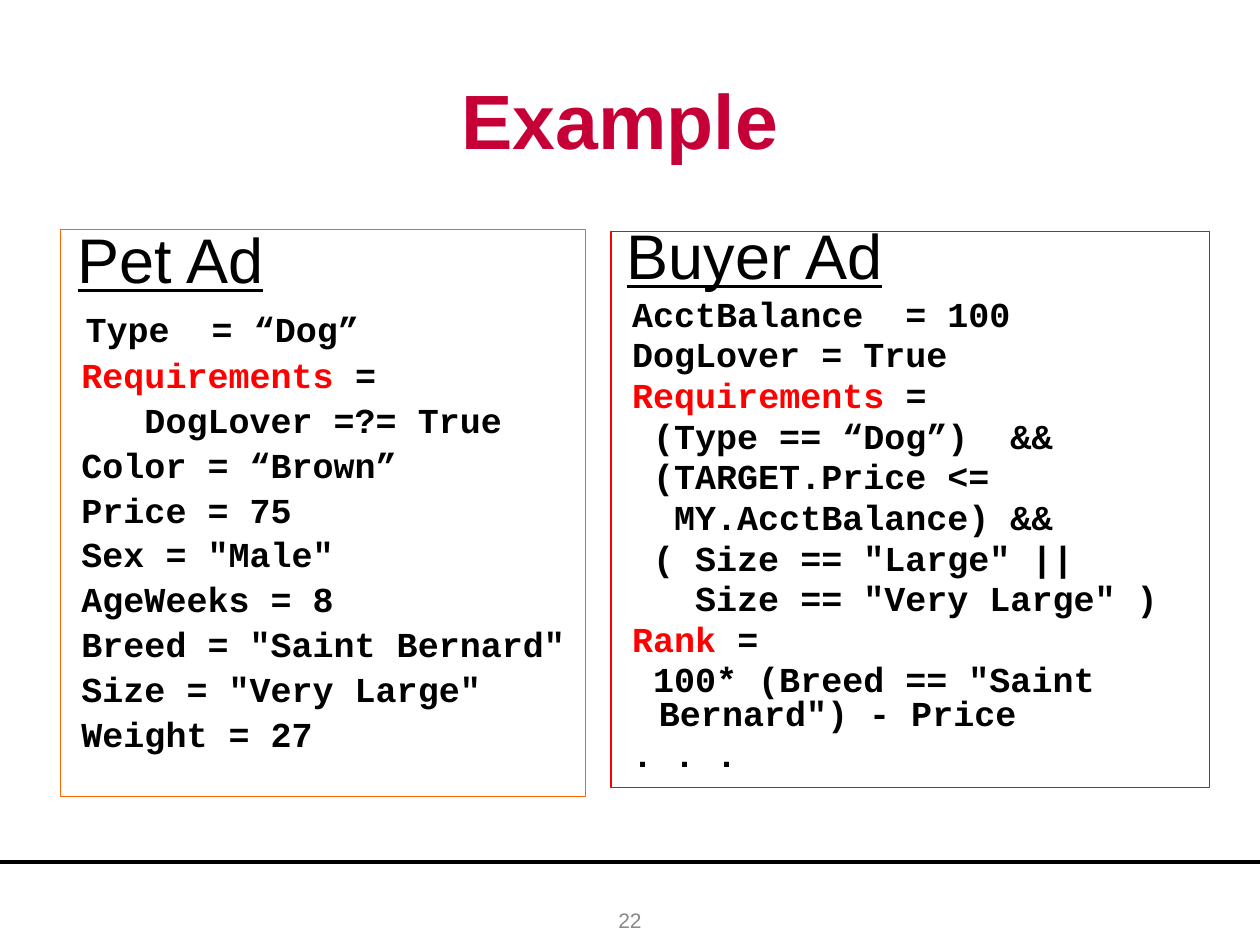
"""Build the example slide comparing a pet ad with a buyer ad."""
import pptx
import pptx.dml.color
import pptx.enum.shapes
import pptx.enum.text
import pptx.util
from lxml import etree

COLORS = {"text": "000000", "title": "C60036", "keyword": "FF0000",
          "pet": "FF6600", "buyer": "FF0000", "number": "898989"}
KEYWORDS = ("Requirements", "Rank")
PET_LINES = [
    "Type  = “Dog”", " Requirements =", "    DogLover =?= True",
    " Color = “Brown”", " Price = 75", ' Sex = "Male"', " AgeWeeks = 8",
    ' Breed = "Saint Bernard"', ' Size = "Very Large"', " Weight = 27",
]
BUYER_LINES = [
    "AcctBalance  = 100", " DogLover = True", " Requirements =",
    "  (Type == “Dog”)  &&", "  (TARGET.Price <=", "   MY.AcctBalance) &&",
    '  ( Size == "Large" ||', '    Size == "Very Large" )', " Rank =",
    '  100* (Breed == "Saint Bernard") - Price', " . . .",
]


class AdSlide:
    columns, rows = 100, 75
    heading = {"name": "Arial", "size": pptx.util.Pt(36)}
    code = {"name": "Courier New", "size": pptx.util.Pt(20), "bold": True}

    def __init__(self, presentation):
        self.width, self.height = presentation.slide_width, presentation.slide_height
        self.slide = presentation.slides.add_slide(presentation.slide_layouts[6])

    def place(self, column, row):
        return (round(column * self.width / self.columns),
                round(row * self.height / self.rows))

    def color(self, name):
        return pptx.dml.color.RGBColor.from_string(COLORS[name])

    def set_frame(self, shape, anchor):
        frame = shape.text_frame
        values = {"word_wrap": True, "vertical_anchor": anchor, "margin_left": 0,
                  "margin_right": 0, "margin_top": 0, "margin_bottom": 0}
        for name, value in values.items():
            setattr(frame, name, value)
        return frame

    def add_run(self, paragraph, text, color, style):
        run = paragraph.add_run()
        run.text = text
        for name, value in style.items():
            setattr(run.font, name, value)
        run.font.color.rgb = self.color(color)

    def add_label(self, text, left, top, width, height, color, style):
        shape = self.slide.shapes.add_textbox(*self.place(left, top),
                                              *self.place(width, height))
        frame = self.set_frame(shape, pptx.enum.text.MSO_ANCHOR.MIDDLE)
        paragraph = frame.paragraphs[0]
        paragraph.alignment = pptx.enum.text.PP_ALIGN.CENTER
        self.add_run(paragraph, text, color, {"name": "Arial", **style})

    def add_rule(self, row):
        line = self.slide.shapes.add_connector(
            pptx.enum.shapes.MSO_CONNECTOR.STRAIGHT,
            *self.place(0, row), *self.place(self.columns, row))
        line.line.color.rgb = self.color("text")
        line.line.width = pptx.util.Pt(2.25)
        etree.SubElement(line._element.spPr, pptx.oxml.ns.qn("a:effectLst"))

    def add_paragraph(self, paragraph, spacing, before):
        values = {"alignment": pptx.enum.text.PP_ALIGN.LEFT,
                  "line_spacing": spacing, "space_before": pptx.util.Pt(before)}
        for name, value in values.items():
            setattr(paragraph, name, value)
        indent = pptx.util.Inches(0.38)
        properties = paragraph._p.get_or_add_pPr()
        properties.set("marL", str(indent))
        properties.set("indent", str(-indent))
        return paragraph

    def add_code(self, paragraph, text):
        keyword = next((word for word in KEYWORDS if word in text), None)
        if keyword is None:
            self.add_run(paragraph, text, "text", self.code)
            return
        for part in text.partition(keyword):
            color = "keyword" if part == keyword else "text"
            self.add_run(paragraph, part, color, self.code)

    def add_ad(self, title, lines, left, top, width, height, color, spacing, leads):
        shape = self.slide.shapes.add_shape(
            pptx.enum.shapes.MSO_SHAPE.RECTANGLE,
            *self.place(left, top), *self.place(width, height))
        shape.shadow.inherit = False
        shape.fill.background()
        shape.line.color.rgb = self.color(color)
        shape.line.width = pptx.util.Pt(0.75)
        frame = self.set_frame(shape, pptx.enum.text.MSO_ANCHOR.TOP)
        heading_lead, code_lead = (pptx.util.Pt(size) for size in leads)
        paragraph = self.add_paragraph(frame.paragraphs[0], spacing, 0)
        self.add_run(paragraph, " ", "text", {**self.heading, "size": heading_lead})
        self.add_run(paragraph, title, "text", {**self.heading, "underline": True})
        for index, text in enumerate(lines):
            before = 4 if index else 5
            paragraph = self.add_paragraph(frame.add_paragraph(), spacing, before)
            if index == 0:
                self.add_run(paragraph, " ", "text", {**self.code, "size": code_lead})
            self.add_code(paragraph, text)


def main():
    presentation = pptx.Presentation()
    presentation.slide_width = pptx.util.Inches(10)
    presentation.slide_height = pptx.util.Inches(7.5)
    slide = AdSlide(presentation)
    slide.add_rule(68.4)
    slide.add_label("22", 38.35, 71, 23.3, 4, "number", {"size": pptx.util.Pt(12)})
    slide.add_label("Example", 6.7, 4.4, 85, 10, "title",
                    {"size": pptx.util.Pt(44), "bold": True})
    slide.add_ad("Pet Ad", PET_LINES, 4.8, 18.2, 41.7, 45, "pet", 0.9, (36, 24))
    slide.add_ad("Buyer Ad", BUYER_LINES, 48.5, 18.35, 47.5, 44.15, "buyer", 0.8,
                 (32, 20))
    presentation.save("out.pptx")


if __name__ == "__main__":
    main()
